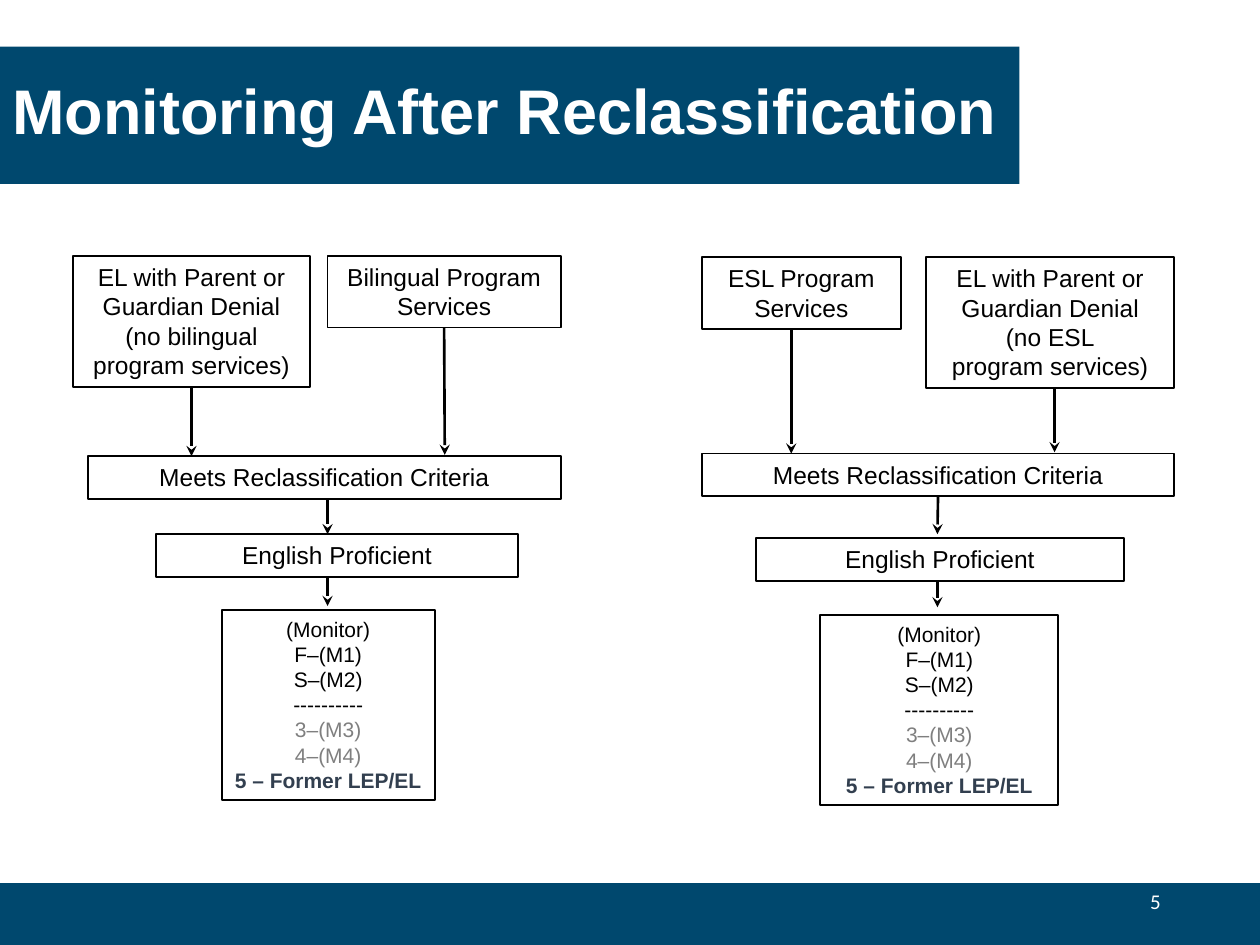
from lxml import etree
from pptx import Presentation
from pptx.dml.color import RGBColor
from pptx.enum.shapes import MSO_CONNECTOR, MSO_SHAPE
from pptx.enum.text import MSO_ANCHOR, PP_ALIGN
from pptx.oxml.ns import qn
from pptx.util import Inches, Pt

RECTANGLE = MSO_SHAPE.RECTANGLE
STRAIGHT = MSO_CONNECTOR.STRAIGHT
LEFT, CENTER, RIGHT = PP_ALIGN.LEFT, PP_ALIGN.CENTER, PP_ALIGN.RIGHT
TOP, MIDDLE = MSO_ANCHOR.TOP, MSO_ANCHOR.MIDDLE
BOTTOM_SITE = 2

COLORS = {"navy": "00486E", "white": "FFFFFF", "black": "000000",
          "gray": "7F7F7F", "slate": "323F4F"}

BANDS = [(-0.01, 0.37, 8.1, 1.09), (0, 7.01, 10, 0.49)]

CRITERIA = ["Meets Reclassification Criteria"]
PROFICIENT = ["English Proficient"]
MONITOR = [("(Monitor)", "black", False), ("F–(M1)", "black", False),
           ("S–(M2)", "black", False), ("----------", "black", False),
           ("3–(M3)", "gray", False), ("4–(M4)", "gray", False),
           ("5 – Former LEP/EL", "slate", True)]

FLOWS = [
    {
        "boxes": {
            "denial": ((0.58, 2.03, 1.88, 1.04),
                       ["EL with Parent or Guardian Denial", "(no bilingual", "program services)"]),
            "program": ((2.6, 2.03, 1.85, 0.57), ["Bilingual Program Services"]),
            "criteria": ((0.7, 3.62, 3.75, 0.34), CRITERIA),
            "proficient": ((1.24, 4.24, 2.87, 0.34), PROFICIENT),
        },
        "monitor": (1.76, 4.84, 1.69, 1.51),
        "arrows": [("denial", 1.52, 3.62), ("program", 3.53, 3.61),
                   ("criteria", 2.6, 4.24), ("proficient", 2.6, 4.81)],
    },
    {
        "boxes": {
            "denial": ((7.35, 2.04, 1.97, 1.04),
                       ["EL with Parent or Guardian Denial", "(no ESL", "program services)"]),
            "program": ((5.57, 2.04, 1.58, 0.57), ["ESL Program Services"]),
            "criteria": ((5.57, 3.6, 3.75, 0.34), CRITERIA),
            "proficient": ((6, 4.27, 2.92, 0.34), PROFICIENT),
        },
        "monitor": (6.51, 4.88, 1.89, 1.51),
        "arrows": [("denial", 8.37, 3.59), ("program", 6.28, 3.6),
                   ("criteria", 7.44, 4.24), ("proficient", 7.44, 4.82)],
    },
]


def color(name):
    return RGBColor.from_string(COLORS[name])


def add_rectangle(slide, place, fill, line=None):
    shape = slide.shapes.add_shape(RECTANGLE, *map(Inches, place))
    shape.shadow.inherit = False
    shape.fill.solid()
    shape.fill.fore_color.rgb = color(fill)
    if line:
        shape.line.color.rgb = color(line)
        shape.line.width = Pt(1)
    else:
        shape.line.fill.background()
    return shape


def set_frame(shape, anchor):
    frame = shape.text_frame
    frame.word_wrap = True
    frame.vertical_anchor = anchor
    return frame


def add_run(paragraph, text, size, name="black", bold=False, font="Arial"):
    run = paragraph.add_run()
    run.text = text
    run.font.name = font
    run.font.size = Pt(size)
    run.font.bold = bold
    run.font.color.rgb = color(name)


def add_box(slide, place, lines):
    shape = add_rectangle(slide, place, "white", "black")
    paragraph = set_frame(shape, TOP).paragraphs[0]
    paragraph.alignment = CENTER
    for index, text in enumerate(lines):
        if index:
            paragraph.add_line_break()
        add_run(paragraph, text, 14)
    return shape


def add_monitor(slide, place):
    frame = set_frame(add_rectangle(slide, place, "white", "black"), TOP)
    for index, (text, name, bold) in enumerate(MONITOR):
        paragraph = frame.add_paragraph() if index else frame.paragraphs[0]
        paragraph.alignment = CENTER
        add_run(paragraph, text, 12, name, bold)


def add_arrow(slide, box, x, end_y):
    start_x, end_x = Inches(x), Inches(x)
    connector = slide.shapes.add_connector(
        STRAIGHT, start_x, box.top + box.height, end_x, Inches(end_y))
    if abs(box.left + box.width // 2 - start_x) < Inches(0.01):
        connector.begin_connect(box, BOTTOM_SITE)
    connector.line.color.rgb = color("black")
    connector.line.width = Pt(1.5)
    etree.SubElement(connector.line._get_or_add_ln(), qn("a:tailEnd"), type="stealth")
    etree.SubElement(connector._element.spPr, qn("a:effectLst"))


def add_label(slide, place, text, size, alignment, bold=False, font="Arial"):
    shape = slide.shapes.add_textbox(*map(Inches, place))
    paragraph = set_frame(shape, MIDDLE).paragraphs[0]
    paragraph.alignment = alignment
    add_run(paragraph, text, size, "white", bold, font)
    return paragraph


def main():
    """Build the reclassification monitoring slide."""
    presentation = Presentation()
    presentation.slide_width, presentation.slide_height = Inches(10), Inches(7.5)
    slide = presentation.slides.add_slide(presentation.slide_layouts[6])
    for place in BANDS:
        add_rectangle(slide, place, "navy")
    title = add_label(slide, (0, 0.49, 8.54, 0.83),
                      "Monitoring After Reclassification", 36, LEFT, True)
    title.line_spacing = 0.9
    for flow in FLOWS:
        boxes = {key: add_box(slide, *box) for key, box in flow["boxes"].items()}
        add_monitor(slide, flow["monitor"])
        for key, x, end_y in flow["arrows"]:
            add_arrow(slide, boxes[key], x, end_y)
    add_label(slide, (7.06, 6.95, 2.25, 0.4), "5", 12, RIGHT, font="Calibri")
    presentation.save("out.pptx")


if __name__ == "__main__":
    main()
